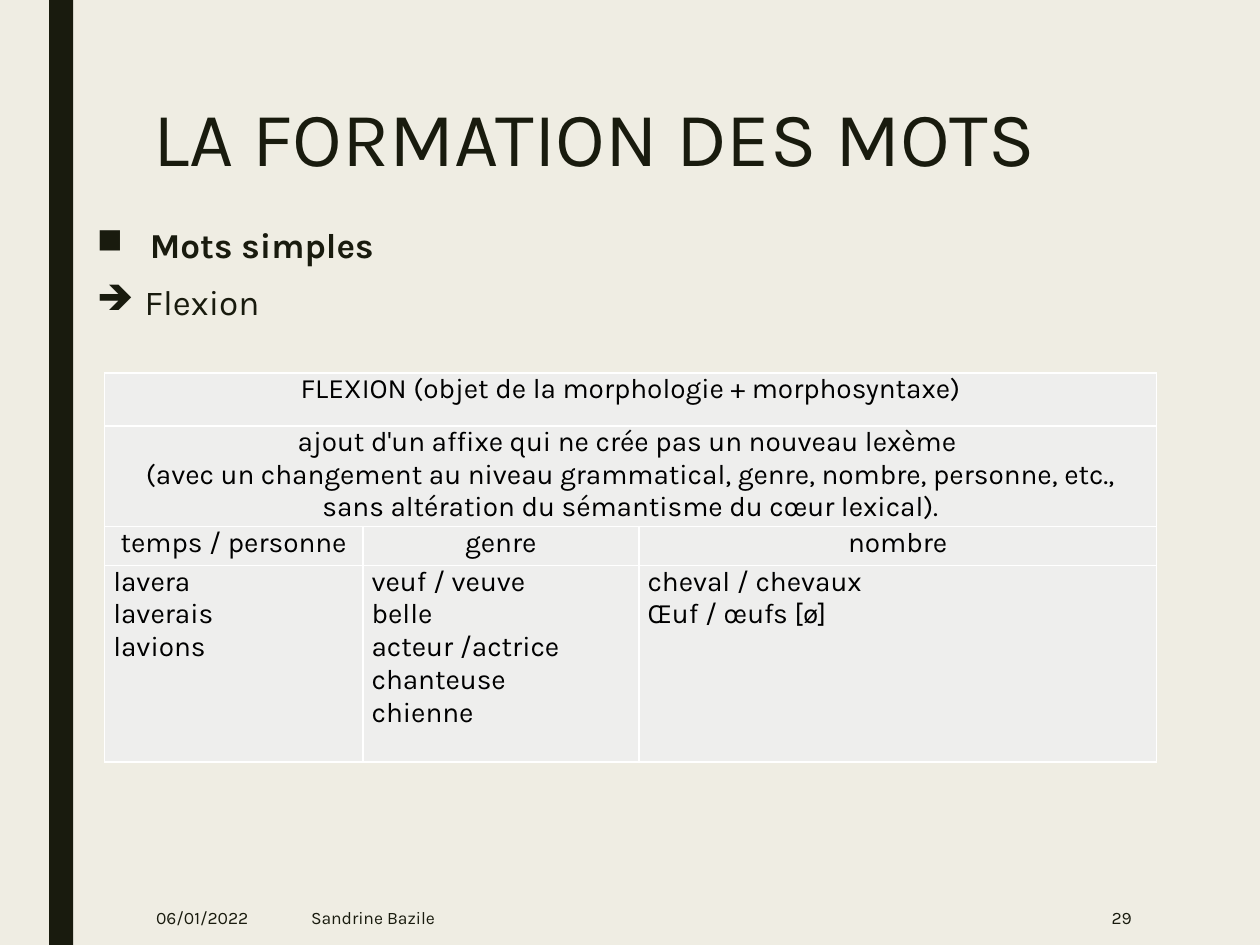
"""Build a slide on word formation with a table of inflection examples."""
from dataclasses import dataclass, field

import pptx
import pptx.dml.color
import pptx.enum.shapes
import pptx.enum.text
import pptx.oxml
import pptx.oxml.ns
import pptx.util

ALIGN = pptx.enum.text.PP_ALIGN
ANCHOR = pptx.enum.text.MSO_ANCHOR
COLUMNS, ROWS = 100, 75
SLIDE_WIDTH, SLIDE_HEIGHT = pptx.util.Inches(10), pptx.util.Inches(7.5)


@dataclass(frozen=True)
class Theme:
    font: str = "Karla"
    paper: str = "EFEDE3"
    ink: str = "191B0E"
    cell: str = "EEEEED"
    cell_ink: str = "000000"
    border: str = "FFFFFF"
    title: int = 44
    body: int = 20
    table: int = 16
    footer: int = 10


@dataclass(frozen=True)
class Area:
    left: float
    top: float
    width: float
    height: float


@dataclass(frozen=True)
class Line:
    text: str
    size: int
    color: str
    bold: bool = False
    bullet: str = ""
    indent: float = 0
    layout: dict = field(default_factory=dict)


@dataclass(frozen=True)
class TableRow:
    height: float
    cells: tuple[tuple[str, ...], ...]
    align: int = ALIGN.CENTER


THEME = Theme()
BAR = Area(3.9, 0, 1.9, 75)
TITLE_AREA = Area(11.2, 7.5, 78.8, 16.2)
BODY_AREA = Area(6.7, 17.5, 89.2, 55.4)
TABLE_AREA = Area(8.3, 29.6, 83.5, 30.9)
TABLE_COLUMNS = (20.5, 21.9, 41.1)
BODY_LAYOUT = {
    "alignment": ALIGN.JUSTIFY, "line_spacing": 0.94, "space_before": pptx.util.Pt(10)}
TITLE = Line("LA FORMATION DES MOTS", THEME.title, THEME.ink,
             layout={"alignment": ALIGN.LEFT, "line_spacing": 0.89})
BODY = (
    Line("Mots simples", THEME.body, THEME.ink, True, "■", 4.2, BODY_LAYOUT),
    Line("Flexion", THEME.body, THEME.ink, False, "➔", 3.8,
         BODY_LAYOUT | {"space_after": pptx.util.Pt(2)}),
)
FLEXION = (
    TableRow(4.2, (("FLEXION (objet de la morphologie + morphosyntaxe)",),)),
    TableRow(6.2, ((
        "ajout d'un affixe qui ne crée pas un nouveau lexème \v"
        "(avec un changement au niveau grammatical, genre, nombre, personne, etc., "
        "sans altération du sémantisme du cœur lexical).",),)),
    TableRow(3.1, (("temps / personne",), ("genre",), ("nombre",))),
    TableRow(15.6, (
        ("lavera", "laverais", "lavions"),
        ("veuf / veuve", "belle", "acteur /actrice", "chanteuse", "chienne"),
        ("cheval / chevaux", "Œuf / œufs [ø]")), ALIGN.LEFT),
)
FOOTER = (
    (Area(11.4, 70.6, 9.9, 4.4), "06/01/2022", ALIGN.LEFT),
    (Area(23.7, 70.6, 51.5, 4.4), "Sandrine Bazile", ALIGN.LEFT),
    (Area(77.7, 70.6, 13.1, 4.4), "29", ALIGN.RIGHT),
)


def across(columns: float) -> int:
    return round(SLIDE_WIDTH * columns / COLUMNS)


def down(rows: float) -> int:
    return round(SLIDE_HEIGHT * rows / ROWS)


def place(area: Area) -> tuple[int, int, int, int]:
    return across(area.left), down(area.top), across(area.width), down(area.height)


def rgb(color: str) -> pptx.dml.color.RGBColor:
    return pptx.dml.color.RGBColor.from_string(color)


def apply(target: object, values: dict) -> None:
    for name, value in values.items():
        setattr(target, name, value)


def paint(fill: object, color: str) -> None:
    fill.solid()
    fill.fore_color.rgb = rgb(color)


def write(frame: object, lines: tuple[Line, ...], frame_format: dict) -> None:
    apply(frame, {"word_wrap": True} | frame_format)
    for index, line in enumerate(lines):
        paragraph = frame.add_paragraph() if index else frame.paragraphs[0]
        paragraph.text = line.text
        apply(paragraph, line.layout)
        for run in paragraph.runs:
            apply(run.font, {"name": THEME.font, "size": pptx.util.Pt(line.size),
                             "bold": line.bold})
            run.font.color.rgb = rgb(line.color)
        if line.bullet:
            properties = paragraph._p.get_or_add_pPr()
            properties.set("marL", str(across(line.indent)))
            properties.set("indent", str(-across(line.indent)))
            properties.append(pptx.oxml.parse_xml(
                f'<a:buChar {pptx.oxml.ns.nsdecls("a")} char="{line.bullet}"/>'))


def add_text(slide: object, area: Area, lines: tuple[Line, ...], anchor: int) -> None:
    box = slide.shapes.add_textbox(*place(area))
    write(box.text_frame, lines, {"vertical_anchor": anchor})


def add_borders(cell: object) -> None:
    properties = cell._tc.get_or_add_tcPr()
    for index, side in enumerate("LRTB"):
        properties.insert(index, pptx.oxml.parse_xml(
            f'<a:ln{side} {pptx.oxml.ns.nsdecls("a")} w="{pptx.util.Pt(1)}"><a:solidFill>'
            f'<a:srgbClr val="{THEME.border}"/></a:solidFill></a:ln{side}>'))


def add_flexion(slide: object) -> None:
    table = slide.shapes.add_table(
        len(FLEXION), len(TABLE_COLUMNS), *place(TABLE_AREA)).table
    apply(table, {"first_row": False, "horz_banding": False})
    for column, width in zip(table.columns, TABLE_COLUMNS):
        column.width = across(width)
    margins = {"margin_left": across(0.7), "margin_right": across(0.7),
               "margin_top": 0, "margin_bottom": 0}
    for row_index, row in enumerate(FLEXION):
        table.rows[row_index].height = down(row.height)
        for cell in table.rows[row_index].cells:
            apply(cell, margins)
            paint(cell.fill, THEME.cell)
            add_borders(cell)
        if len(row.cells) == 1:
            table.cell(row_index, 0).merge(
                table.cell(row_index, len(TABLE_COLUMNS) - 1))
        for column_index, words in enumerate(row.cells):
            lines = tuple(Line(word, THEME.table, THEME.cell_ink,
                               layout={"alignment": row.align}) for word in words)
            write(table.cell(row_index, column_index).text_frame, lines, {})


def main() -> None:
    deck = pptx.Presentation()
    apply(deck, {"slide_width": SLIDE_WIDTH, "slide_height": SLIDE_HEIGHT})
    slide = deck.slides.add_slide(deck.slide_layouts[5])
    paint(slide.background.fill, THEME.paper)

    bar = slide.shapes.add_shape(
        pptx.enum.shapes.MSO_SHAPE.RECTANGLE, *place(BAR))
    bar.shadow.inherit = False
    paint(bar.fill, THEME.ink)
    bar.line.fill.background()

    heading = slide.shapes.title
    apply(heading, dict(zip(("left", "top", "width", "height"), place(TITLE_AREA))))
    write(heading.text_frame, (TITLE,), {
        "vertical_anchor": ANCHOR.TOP, "auto_size": pptx.enum.text.MSO_AUTO_SIZE.NONE})

    add_text(slide, BODY_AREA, BODY, ANCHOR.TOP)
    add_flexion(slide)
    for area, text, align in FOOTER:
        line = Line(text, THEME.footer, THEME.ink, layout={"alignment": align})
        add_text(slide, area, (line,), ANCHOR.MIDDLE)
    deck.save("out.pptx")


if __name__ == "__main__":
    main()
